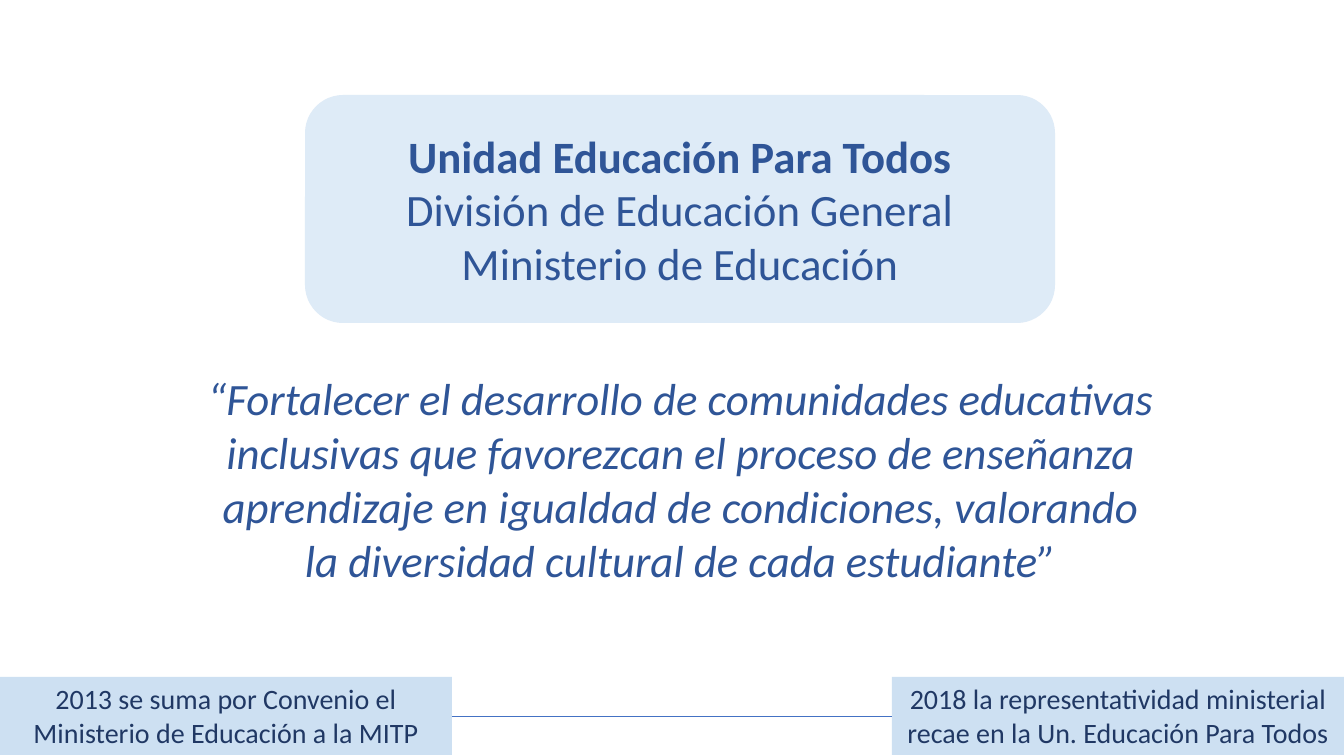
import pptx
import pptx.util
import pptx.dml.color
import pptx.enum.shapes
import pptx.enum.text
import pptx.oxml
import pptx.oxml.ns
from lxml import etree

PX = 914400 / 100.8
COLORS = {
    "panel": "DEEBF7",
    "heading": "2F5597",
    "band": "9DC3E6",
    "milestone": "203864",
    "timeline": "4472C4",
}
SHAPES = pptx.enum.shapes.MSO_SHAPE
ANCHORS = pptx.enum.text.MSO_ANCHOR


def px(*lengths):
    return [pptx.util.Emu(round(length * PX)) for length in lengths]


def write(shape, lines, size=32, color="heading", bold_lines=0, italic=False, anchor=ANCHORS.TOP):
    frame = shape.text_frame
    frame.word_wrap = True
    frame.auto_size = pptx.enum.text.MSO_AUTO_SIZE.NONE
    frame.vertical_anchor = anchor
    frame.text = "\n".join(lines)
    for index, paragraph in enumerate(frame.paragraphs):
        paragraph.alignment = pptx.enum.text.PP_ALIGN.CENTER
        for run in paragraph.runs:
            run.font.name = "Calibri"
            run.font.size = pptx.util.Pt(size)
            run.font.bold = index < bold_lines
            run.font.italic = italic
            run.font.color.rgb = pptx.dml.color.RGBColor.from_string(COLORS[color])


presentation = pptx.Presentation()
presentation.slide_width, presentation.slide_height = px(1344, 756)
slide = presentation.slides.add_slide(presentation.slide_layouts[5])

unit_bounds = px(305, 95, 750, 228)
panel = slide.shapes.add_shape(SHAPES.ROUNDED_RECTANGLE, *unit_bounds)
panel.shadow.inherit = False
panel.fill.solid()
panel.fill.fore_color.rgb = pptx.dml.color.RGBColor.from_string(COLORS["panel"])
panel.line.fill.background()

unit = slide.shapes.title
unit.left, unit.top, unit.width, unit.height = unit_bounds
unit.element.addprevious(panel.element)
write(
    unit,
    ["Unidad Educación Para Todos", "División de Educación General", "Ministerio de Educación"],
    bold_lines=1,
    anchor=ANCHORS.MIDDLE,
)

mission = slide.shapes.add_textbox(*px(194, 366, 974, 228))
write(
    mission,
    [
        "“Fortalecer el desarrollo de comunidades educativas inclusivas que favorezcan "
        "el proceso de enseñanza aprendizaje en igualdad de condiciones, valorando "
        "la diversidad cultural de cada estudiante”"
    ],
    italic=True,
)

milestones = []
for left, event in [
    (0, "2013 se suma por Convenio el Ministerio de Educación a la MITP"),
    (892, "2018 la representatividad ministerial recae en la Un. Educación Para Todos"),
]:
    milestone = slide.shapes.add_shape(SHAPES.RECTANGLE, *px(left, 677, 452, 78))
    milestone.shadow.inherit = False
    milestone.fill.solid()
    milestone.fill.fore_color.rgb = pptx.dml.color.RGBColor.from_string(COLORS["band"])
    band_color = milestone.element.spPr.find(".//" + pptx.oxml.ns.qn("a:srgbClr"))
    etree.SubElement(band_color, pptx.oxml.ns.qn("a:alpha"), val="50000")
    milestone.line.fill.background()
    write(milestone, [event], size=20, color="milestone")
    milestones.append(milestone)

timeline = slide.shapes.add_connector(
    pptx.enum.shapes.MSO_CONNECTOR.STRAIGHT, *px(452, 716, 892, 716)
)
timeline.begin_connect(milestones[0], 3)
timeline.end_connect(milestones[1], 1)
timeline.line.color.rgb = pptx.dml.color.RGBColor.from_string(COLORS["timeline"])
timeline.line.width = pptx.util.Pt(0.5)
etree.SubElement(timeline.element.spPr, pptx.oxml.ns.qn("a:effectLst"))

presentation.save("out.pptx")
